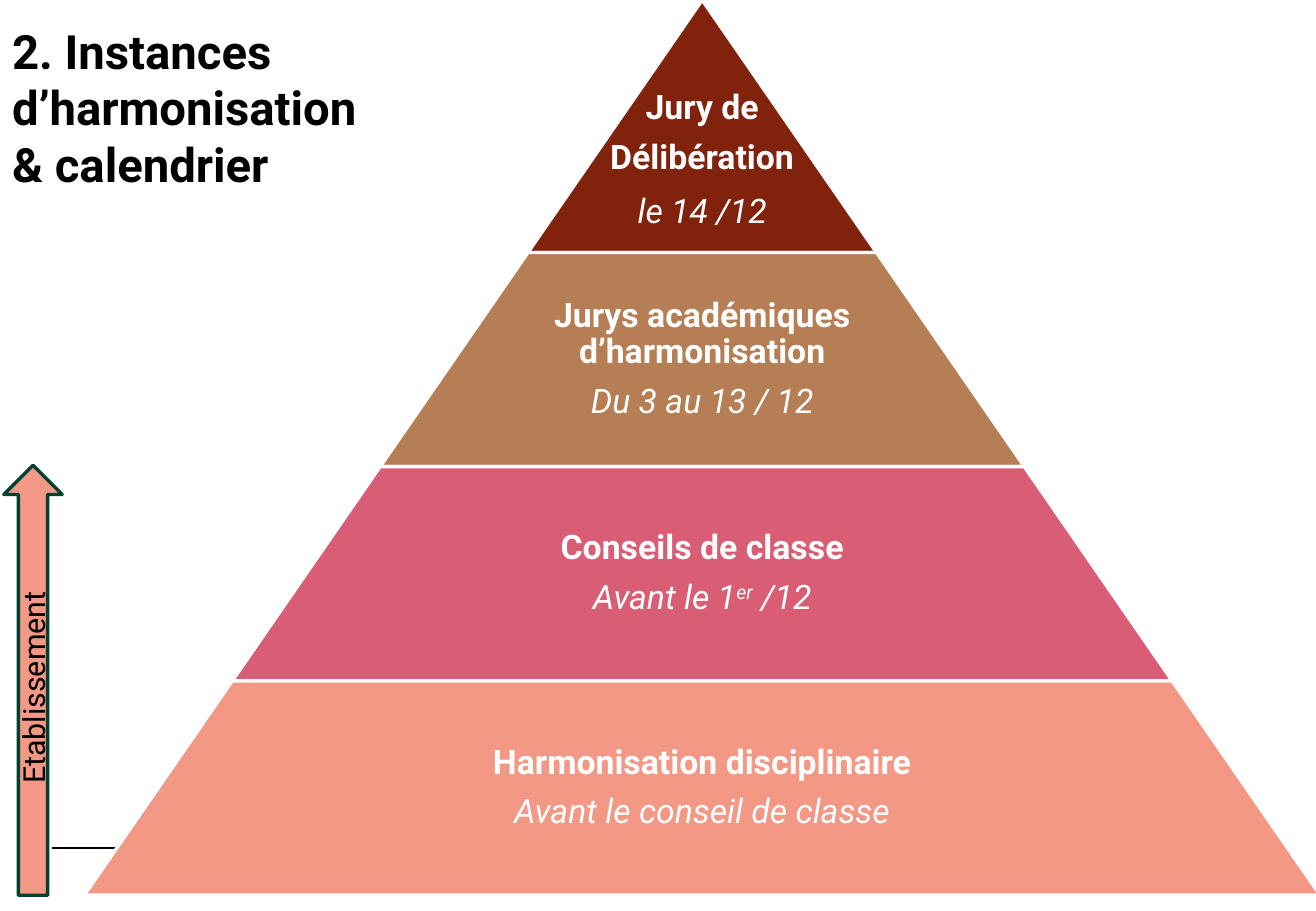
from dataclasses import dataclass

from lxml.etree import SubElement
from pptx import Presentation
from pptx.dml.color import RGBColor
from pptx.enum.shapes import MSO_CONNECTOR, MSO_SHAPE
from pptx.enum.text import MSO_ANCHOR, MSO_AUTO_SIZE, PP_ALIGN
from pptx.oxml.ns import qn
from pptx.util import Cm, Pt


@dataclass(frozen=True)
class Theme:
    font: str = "Roboto"
    white: str = "FFFFFF"
    black: str = "000000"
    green: str = "004130"
    salmon: str = "F29885"
    rose: str = "D85D75"
    tan: str = "B67E54"
    brick: str = "81220D"
    title: int = 28
    tier: int = 20
    label: int = 18


THEME = Theme()
MID = 14.68    # pyramid axis, cm
SLOPE = 0.69   # half width gained per unit of height


@dataclass(frozen=True)
class Tier:
    names: tuple
    date: str      # text between two ^ marks is raised
    color: str
    high: float
    share: float = 0.65     # text width as a part of the tier width
    drop: float = 0         # text offset from the tier top, if not centred
    pitch: float = 0.9      # line spacing of the date


TIERS = (
    Tier(("Jury de", "Délibération"), "le 14 /12", THEME.brick, 5.28, 1, 1.82, 1.0),
    Tier(("Jurys académiques d’harmonisation",), "Du 3 au 13 / 12", THEME.tan, 4.48),
    Tier(("Conseils de classe",), "Avant le 1^er^ /12", THEME.rose, 4.48),
    Tier(("Harmonisation disciplinaire",), "Avant le conseil de classe",
         THEME.salmon, 4.48),
)


def style(font, size, color, bold=False, slant=False):
    font.name = THEME.font
    font.size = Pt(size)
    font.bold = bold
    font.italic = slant
    font.color.rgb = RGBColor.from_string(color)


def paint(shape, fill, line, width=2):
    shape.shadow.inherit = False
    shape.fill.solid()
    shape.fill.fore_color.rgb = RGBColor.from_string(fill)
    shape.line.color.rgb = RGBColor.from_string(line)
    shape.line.width = Pt(width)


def add_title(slide, text):
    title = slide.shapes.title
    title.left, title.top, title.width, title.height = Cm(0), Cm(0.33), Cm(10.36), Cm(5.05)
    title.fill.solid()
    title.fill.fore_color.rgb = RGBColor.from_string(THEME.white)
    frame = title.text_frame
    frame.text = text
    frame.word_wrap = True
    frame.auto_size = MSO_AUTO_SIZE.NONE
    frame.vertical_anchor = MSO_ANCHOR.TOP
    for para in frame.paragraphs:
        para.alignment = PP_ALIGN.LEFT
        for run in para.runs:
            style(run.font, THEME.title, THEME.black, bold=True)


def add_rule(slide):
    rule = slide.shapes.add_connector(
        MSO_CONNECTOR.STRAIGHT, Cm(1.09), Cm(17.73), Cm(26.44), Cm(17.73))
    rule.line.color.rgb = RGBColor.from_string(THEME.black)
    rule.line.width = Pt(0.8)
    SubElement(rule._element.spPr, qn("a:effectLst"))


def add_text(slide, tier, top, wide):
    span = wide * tier.share
    box = slide.shapes.add_textbox(
        Cm(MID - span / 2), Cm(top + tier.drop), Cm(span), Cm(tier.high - tier.drop))
    frame = box.text_frame
    frame.word_wrap = True
    frame.vertical_anchor = MSO_ANCHOR.TOP if tier.drop else MSO_ANCHOR.MIDDLE
    frame.margin_left = frame.margin_right = Cm(0.07)
    frame.margin_top = frame.margin_bottom = Cm(0.07)
    # Names in bold, one paragraph each
    frame.text = "\n".join(tier.names)
    for para in frame.paragraphs:
        style(para.runs[0].font, THEME.tier, THEME.white, bold=True)
    # Date in italics, with raised letters
    date = frame.add_paragraph()
    for i, part in enumerate(tier.date.split("^")):
        run = date.add_run()
        run.text = part
        style(run.font, THEME.tier, THEME.white, slant=True)
        if i % 2:
            run.font._element.set("baseline", "30000")
    for para in frame.paragraphs:
        para.alignment = PP_ALIGN.CENTER
        para.line_spacing = 0.9
        para.space_after = Pt(8)
    date.line_spacing = tier.pitch


def add_tier(slide, tier, top):
    wide = 2 * SLOPE * (top + tier.high)
    shape = slide.shapes.add_shape(
        MSO_SHAPE.TRAPEZOID, Cm(MID - wide / 2), Cm(top), Cm(wide), Cm(tier.high))
    shape.adjustments[0] = SLOPE
    paint(shape, tier.color, THEME.white)
    add_text(slide, tier, top, wide)


def add_arrow(slide, text):
    arrow = slide.shapes.add_shape(
        MSO_SHAPE.DOWN_ARROW, Cm(0.08), Cm(9.73), Cm(1.22), Cm(8.99))
    arrow.rotation = 180
    paint(arrow, THEME.salmon, THEME.green)
    frame = arrow.text_frame
    frame.text = text
    frame.vertical_anchor = MSO_ANCHOR.MIDDLE
    frame._txBody.bodyPr.set("vert", "vert")
    para = frame.paragraphs[0]
    para.alignment = PP_ALIGN.CENTER
    style(para.runs[0].font, THEME.label, THEME.black)


def main():
    deck = Presentation()
    deck.slide_width, deck.slide_height = Cm(27.51), Cm(19.05)
    slide = deck.slides.add_slide(deck.slide_layouts[5])
    add_rule(slide)
    # Pyramid, from the tip down
    top = 0
    for tier in TIERS:
        add_tier(slide, tier, top)
        top += tier.high
    add_title(slide, "2. Instances d’harmonisation\n& calendrier")
    add_arrow(slide, "Etablissement")
    deck.save("out.pptx")


if __name__ == "__main__":
    main()
